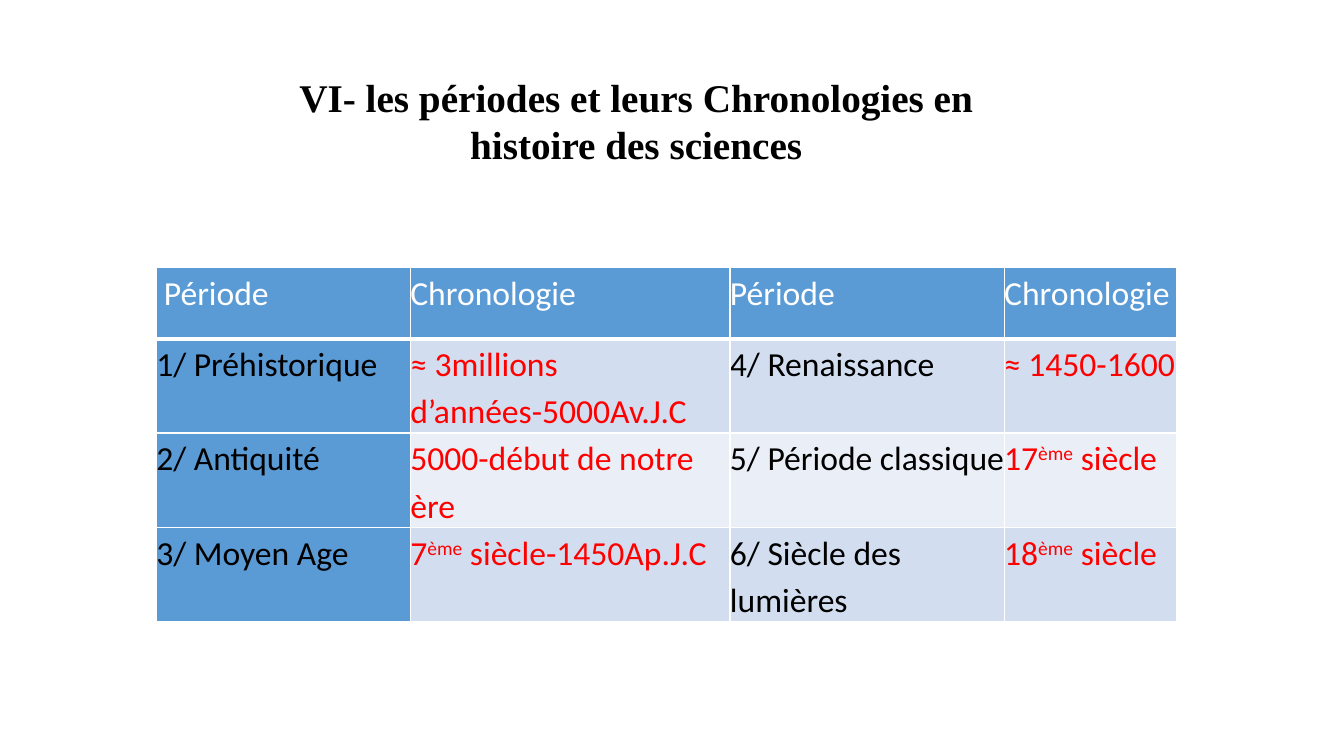
import pptx
import pptx.dml.color
import pptx.enum.text
import pptx.oxml
import pptx.oxml.ns
import pptx.util

Inch = pptx.util.Inches
Pt = pptx.util.Pt
theme = {
    "head": "5B9BD5", "odd": "D2DEEF", "even": "EAEFF7",
    "white": "FFFFFF", "black": "000000", "red": "FF0000",
    "title": 28, "body": 24, "serif": "Times New Roman", "sans": "Calibri",
}
cols = [2.52, 3.17, 2.72, 1.71]
rows = [0.71, 0.93, 0.93, 0.93]
data = [
    ["\N{NO-BREAK SPACE}Période", "Chronologie", "Période", "Chronologie"],
    ["1/ Préhistorique", "≈ 3millions d’années-5000Av.J.C", "4/ Renaissance", "≈ 1450-1600"],
    ["2/ Antiquité", "5000-début de notre ère", "5/ Période classique", "17ème siècle"],
    ["3/ Moyen Age", "7ème siècle-1450Ap.J.C", "6/ Siècle des lumières", "18ème siècle"],
]


def tint(name):
    return pptx.dml.color.RGBColor.from_string(theme[name])


def rule(cell, sides):
    props = cell._tc.get_or_add_tcPr()
    for spot, (side, width) in enumerate(sides.items()):
        props.insert(spot, pptx.oxml.parse_xml(
            f'<a:ln{side} {pptx.oxml.ns.nsdecls("a")} w="{Pt(width)}">'
            f'<a:solidFill><a:srgbClr val="{theme["white"]}"/></a:solidFill></a:ln{side}>'))


deck = pptx.Presentation()
deck.slide_width, deck.slide_height = Inch(13.33), Inch(7.5)
slide = deck.slides.add_slide(deck.slide_layouts[6])

table = slide.shapes.add_table(
    len(rows), len(cols), Inch(1.55), Inch(2.65), Inch(sum(cols)), Inch(sum(rows))).table
for col, width in zip(table.columns, cols):
    col.width = Inch(width)
for row, height in zip(table.rows, rows):
    row.height = Inch(height)

for r, line in enumerate(data):
    for c, text in enumerate(line):
        cell = table.cell(r, c)
        cell.margin_left = cell.margin_right = cell.margin_top = cell.margin_bottom = 0
        band = "head" if r == 0 or c == 0 else "odd" if r % 2 else "even"
        cell.fill.solid()
        cell.fill.fore_color.rgb = tint(band)
        rule(cell, {"L": 1, "R": 1, "T": 1, "B": 1 if r else 3})
        para = cell.text_frame.paragraphs[0]
        para.line_spacing = 1.15
        para.space_after = Pt(10)
        para.font.name = theme["sans"]
        para.font.size = Pt(theme["body"])
        para.font.bold = False
        para.font.color.rgb = tint("white" if r == 0 else "red" if c % 2 else "black")
        for part in filter(None, text.partition("ème")):
            run = para.add_run()
            run.text = part
            if part == "ème":
                run._r.get_or_add_rPr().set("baseline", "30000")

box = slide.shapes.add_textbox(Inch(2.41), Inch(0.68), Inch(7.8), Inch(1.04))
box.text_frame.word_wrap = True
box.text_frame.auto_size = pptx.enum.text.MSO_AUTO_SIZE.SHAPE_TO_FIT_TEXT
para = box.text_frame.paragraphs[0]
para.text = "VI- les périodes et leurs Chronologies en histoire des sciences"
para.alignment = pptx.enum.text.PP_ALIGN.CENTER
para.font.name = theme["serif"]
para.font.size = Pt(theme["title"])
para.font.bold = True
para.font.color.rgb = tint("black")

deck.save("out.pptx")
